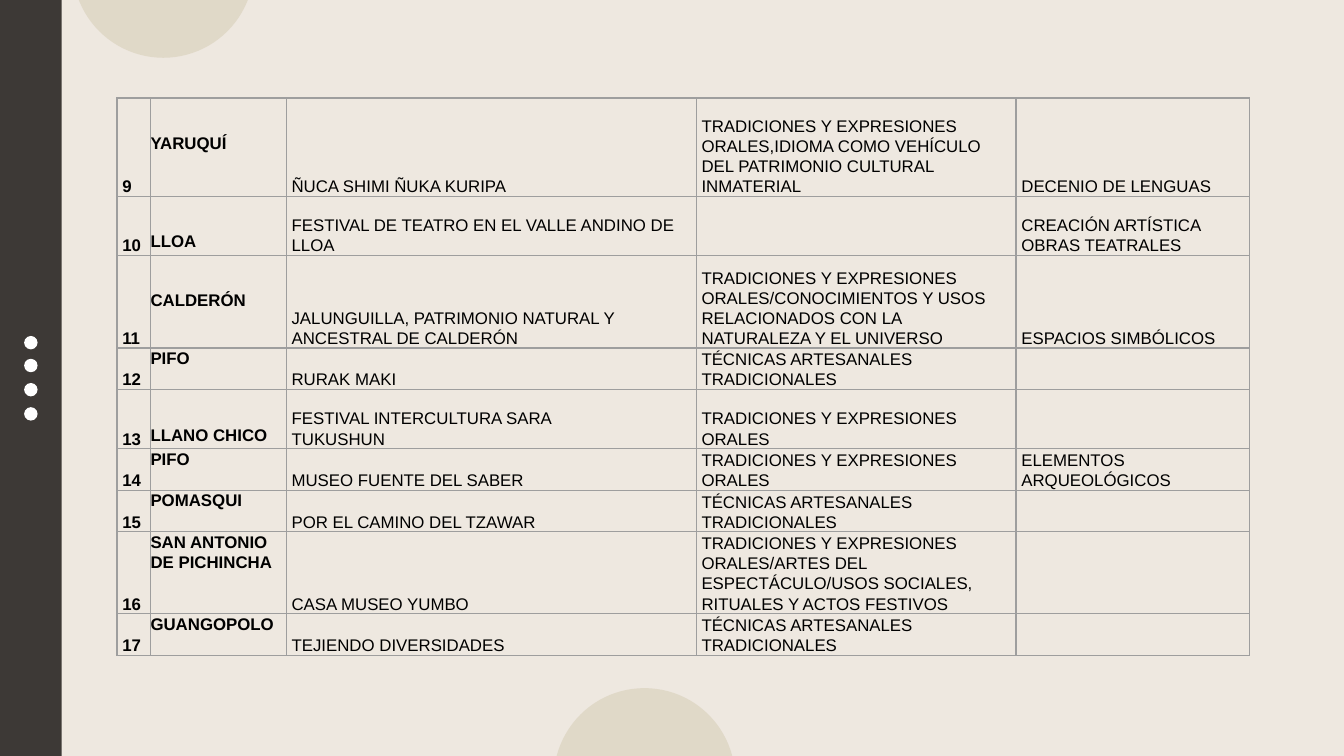
import pptx
import pptx.dml.color
import pptx.enum.shapes
import pptx.enum.text
import pptx.oxml.ns
import pptx.util
from dataclasses import dataclass
from lxml import etree

Inches = pptx.util.Inches
Pt = pptx.util.Pt
qn = pptx.oxml.ns.qn


@dataclass(frozen=True)
class Theme:
    background: str = "EEE8E0"
    sidebar: str = "3D3936"
    dot: str = "FFFFFF"
    circle: str = "D8CFB9"
    circle_opacity: int = 60
    border: str = "9E9E9E"
    border_width: float = 0.75
    text: str = "000000"
    font: str = "Arial"
    size: int = 9
    line_spacing: float = 1.07


THEME = Theme()

PAGE_WIDTH = 10
PAGE_HEIGHT = PAGE_WIDTH * 9 / 16
ORAL = "TRADICIONES Y EXPRESIONES ORALES"
CRAFTS = "TÉCNICAS ARTESANALES TRADICIONALES"
FIRST_NUMBER = 9
COLUMN_WIDTHS = [0.25, 1.01, 3.05, 2.38, 1.74]
PARISH_COLUMN = 1
LOWERED_PARISHES = {"YARUQUÍ", "LLOA", "CALDERÓN", "LLANO CHICO"}
LOWERED_INSET = 0.26

# Row height, parish, project, heritage field, detail
PROJECTS = [
    (0.73, "YARUQUÍ", "ÑUCA SHIMI ÑUKA KURIPA",
     ORAL + ",IDIOMA COMO VEHÍCULO DEL PATRIMONIO CULTURAL INMATERIAL",
     "DECENIO DE LENGUAS"),
    (0.44, "LLOA", "FESTIVAL DE TEATRO EN EL VALLE ANDINO DE LLOA", "",
     "CREACIÓN ARTÍSTICA OBRAS TEATRALES"),
    (0.69, "CALDERÓN", "JALUNGUILLA, PATRIMONIO NATURAL Y ANCESTRAL DE CALDERÓN",
     ORAL + "/CONOCIMIENTOS Y USOS RELACIONADOS CON LA NATURALEZA Y EL UNIVERSO",
     "ESPACIOS SIMBÓLICOS"),
    (0.24, "PIFO", "RURAK MAKI", CRAFTS, ""),
    (0.44, "LLANO CHICO", "FESTIVAL INTERCULTURA SARA\nTUKUSHUN", ORAL, ""),
    (0.3, "PIFO", "MUSEO FUENTE DEL SABER", ORAL, "ELEMENTOS ARQUEOLÓGICOS"),
    (0.3, "POMASQUI", "POR EL CAMINO DEL TZAWAR", CRAFTS, ""),
    (0.52, "SAN ANTONIO DE PICHINCHA", "CASA MUSEO YUMBO",
     ORAL + "/ARTES DEL ESPECTÁCULO/USOS SOCIALES, RITUALES Y ACTOS FESTIVOS", ""),
    (0.24, "GUANGOPOLO", "TEJIENDO DIVERSIDADES", CRAFTS, ""),
]


def paint(fill, color):
    fill.solid()
    fill.fore_color.rgb = pptx.dml.color.RGBColor.from_string(color)


def add_plain_shape(page, kind, left, top, width, height, color, opacity=100):
    shape = page.shapes.add_shape(
        kind, Inches(left), Inches(top), Inches(width), Inches(height))
    shape.shadow.inherit = False
    shape.line.fill.background()
    paint(shape.fill, color)
    if opacity < 100:
        tint = shape.fill._xPr.find(".//" + qn("a:srgbClr"))
        etree.SubElement(tint, qn("a:alpha"), val=str(opacity * 1000))


def add_decoration(page):
    shapes = pptx.enum.shapes.MSO_SHAPE
    add_plain_shape(page, shapes.RECTANGLE, 0, 0, 0.46, PAGE_HEIGHT, THEME.sidebar)
    for top in (2.5, 2.67, 2.85, 3.03):
        add_plain_shape(page, shapes.OVAL, 0.18, top, 0.1, 0.1, THEME.dot)
    for left, top in [(0.54, -0.92), (4.12, 5.12)]:
        add_plain_shape(page, shapes.OVAL, left, top, 1.35, 1.35,
                        THEME.circle, THEME.circle_opacity)


def set_borders(cell):
    properties = cell._tc.get_or_add_tcPr()
    for side in ("a:lnL", "a:lnR", "a:lnT", "a:lnB"):
        line = etree.SubElement(properties, qn(side), w=str(int(Pt(THEME.border_width))))
        fill = etree.SubElement(line, qn("a:solidFill"))
        etree.SubElement(fill, qn("a:srgbClr"), val=THEME.border)


def set_insets(cell, left, top, right, bottom):
    cell.margin_left, cell.margin_top = Inches(left), Inches(top)
    cell.margin_right, cell.margin_bottom = Inches(right), Inches(bottom)


def write_text(cell, text, bold):
    para = cell.text_frame.paragraphs[0]
    para.line_spacing = THEME.line_spacing
    para.font.name = THEME.font
    para.font.size = Pt(THEME.size)
    para.font.bold = bold
    paint(para.font.fill, THEME.text)
    if text:
        para.text = text
    else:
        # An empty cell takes its line height from the end mark.
        etree.SubElement(para._p, qn("a:endParaRPr"), sz=str(THEME.size * 100))


def fill_cell(cell, column, text):
    set_borders(cell)
    cell.fill.background()
    if column == PARISH_COLUMN:
        cell.vertical_anchor = pptx.enum.text.MSO_ANCHOR.TOP
        set_insets(cell, 0, LOWERED_INSET if text in LOWERED_PARISHES else 0, 0, 0)
    else:
        cell.vertical_anchor = pptx.enum.text.MSO_ANCHOR.BOTTOM
        set_insets(cell, 0.04, 0.01, 0.04, 0)
    write_text(cell, text, bold=column <= PARISH_COLUMN)


def add_project_table(page):
    height = sum(project[0] for project in PROJECTS)
    table = page.shapes.add_table(
        len(PROJECTS), len(COLUMN_WIDTHS), Inches(0.87), Inches(0.73),
        Inches(sum(COLUMN_WIDTHS)), Inches(height)).table
    table.first_row = False
    table.horz_banding = False
    for column, width in zip(table.columns, COLUMN_WIDTHS):
        column.width = Inches(width)
    for index, (row_height, *texts) in enumerate(PROJECTS):
        table.rows[index].height = Inches(row_height)
        for column, text in enumerate([str(FIRST_NUMBER + index), *texts]):
            fill_cell(table.cell(index, column), column, text)


def main():
    deck = pptx.Presentation()
    deck.slide_width, deck.slide_height = Inches(PAGE_WIDTH), Inches(PAGE_HEIGHT)
    page = deck.slides.add_slide(deck.slide_layouts[6])
    paint(page.background.fill, THEME.background)
    add_decoration(page)
    add_project_table(page)
    deck.save("out.pptx")


if __name__ == "__main__":
    main()
